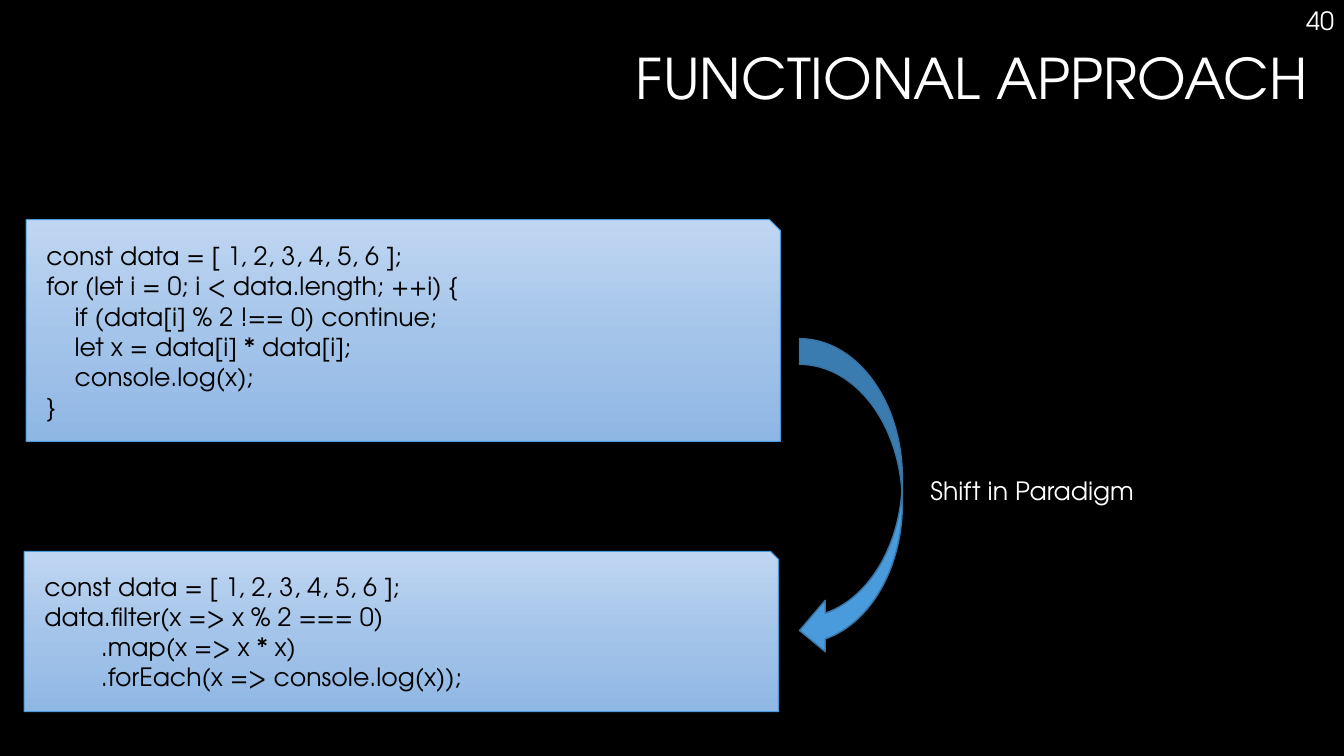
from copy import deepcopy
from dataclasses import dataclass

from pptx import Presentation
from pptx.dml.color import RGBColor
from pptx.enum.shapes import MSO_SHAPE as Preset
from pptx.enum.text import MSO_ANCHOR as Anchor, PP_ALIGN as Align
from pptx.slide import Slide
from pptx.text.text import TextFrame
from pptx.util import Inches, Pt

COLOURS = {
    "background": "000000",
    "light text": "FFFFFF",
    "code text": "000000",
    "box top": "BFD6F2",
    "box middle": "A4C4E9",
    "box bottom": "8FB7E4",
    "accent": "4A9BDC",
    "arrow line": "3773A3",
}
FONT = "TeX Gyre Adventor"
INDENT = 0.28  # one level of code indentation


@dataclass
class CodeBox:
    left: float
    top: float
    height: float
    lines: list[tuple[int, str]]  # indent level, code


@dataclass
class Label:
    left: float
    top: float
    width: float
    height: float
    text: str
    align: Align


CODE_BOXES = [
    CodeBox(0.26, 2.18, 2.2, [
        (0, "const data = [ 1, 2, 3, 4, 5, 6 ];"),
        (0, "for (let i = 0; i < data.length; ++i) {"),
        (1, "if (data[i] % 2 !== 0) continue;"),
        (1, "let x = data[i] * data[i];"),
        (1, "console.log(x);"),
        (0, "}"),
    ]),
    CodeBox(0.24, 5.47, 1.59, [
        (0, "const data = [ 1, 2, 3, 4, 5, 6 ];"),
        (0, "data.filter(x => x % 2 === 0)"),
        (2, ".map(x => x * x)"),
        (2, ".forEach(x => console.log(x));"),
    ]),
]
LABELS = [
    Label(10.45, 0, 2.88, 0.4, "40", Align.RIGHT),
    Label(9.13, 4.67, 3.62, 0.71, "Shift in Paradigm", Align.LEFT),
]


def colour(name: str) -> RGBColor:
    return RGBColor.from_string(COLOURS[name])


def format_text(frame: TextFrame, size: float, colour_name: str, align: Align) -> None:
    for para in frame.paragraphs:
        para.alignment = align
        for span in para.runs:
            span.font.size = Pt(size)
            span.font.name = FONT
            span.font.color.rgb = colour(colour_name)


def add_title(page: Slide, text: str) -> None:
    title = page.shapes.title
    title.left, title.top = Inches(0.26), Inches(0.46)
    title.width, title.height = Inches(12.81), Inches(1.41)
    frame = title.text_frame
    frame.text = text
    frame.vertical_anchor = Anchor.TOP
    frame.paragraphs[0].line_spacing = 0.9
    format_text(frame, 40, "light text", Align.RIGHT)


def add_label(page: Slide, label: Label) -> None:
    box = page.shapes.add_textbox(Inches(label.left), Inches(label.top),
                                  Inches(label.width), Inches(label.height))
    frame = box.text_frame
    frame.word_wrap = True
    frame.text = label.text
    format_text(frame, 18, "light text", label.align)


def add_code_box(page: Slide, code: CodeBox) -> None:
    box = page.shapes.add_shape(Preset.SNIP_1_RECTANGLE, Inches(code.left), Inches(code.top),
                                Inches(7.48), Inches(code.height))
    box.shadow.inherit = False
    box.adjustments[0] = 0.049
    box.line.color.rgb = colour("accent")
    box.line.width = Pt(0.75)

    # Three-stop gradient, top to bottom
    box.fill.gradient()
    box.fill.gradient_angle = 270
    first_stop = box.fill._fill._gradFill.gsLst[0]
    first_stop.addnext(deepcopy(first_stop))
    stops = [(0, "box top"), (0.52, "box middle"), (1, "box bottom")]
    for stop, (position, name) in zip(box.fill.gradient_stops, stops):
        stop.position = position
        stop.color.rgb = colour(name)

    # Code lines
    frame = box.text_frame
    frame.margin_left = frame.margin_right = frame.margin_bottom = Inches(0.2)
    frame.margin_top = Inches(0.16)
    frame.vertical_anchor = Anchor.MIDDLE
    frame.text = "\n".join(text for _, text in code.lines)
    format_text(frame, 18, "code text", Align.LEFT)
    for para, (level, _) in zip(frame.paragraphs, code.lines):
        para._p.get_or_add_pPr().set("marL", str(Inches(INDENT * level)))


def add_shift_arrow(page: Slide) -> None:
    arrow = page.shapes.add_shape(Preset.CURVED_LEFT_ARROW, Inches(7.93), Inches(3.36),
                                  Inches(1.02), Inches(3.15))
    arrow.shadow.inherit = False
    arrow.fill.solid()
    arrow.fill.fore_color.rgb = colour("accent")
    arrow.line.color.rgb = colour("arrow line")
    arrow.line.width = Pt(1)


def main() -> None:
    deck = Presentation()
    deck.slide_width, deck.slide_height = Inches(13.33), Inches(7.5)
    page = deck.slides.add_slide(deck.slide_layouts[5])
    page.background.fill.solid()
    page.background.fill.fore_color.rgb = colour("background")

    add_title(page, "FUNCTIONAL APPROACH")
    for code in CODE_BOXES:
        add_code_box(page, code)
    add_shift_arrow(page)
    for label in LABELS:
        add_label(page, label)

    deck.save("out.pptx")


if __name__ == "__main__":
    main()
